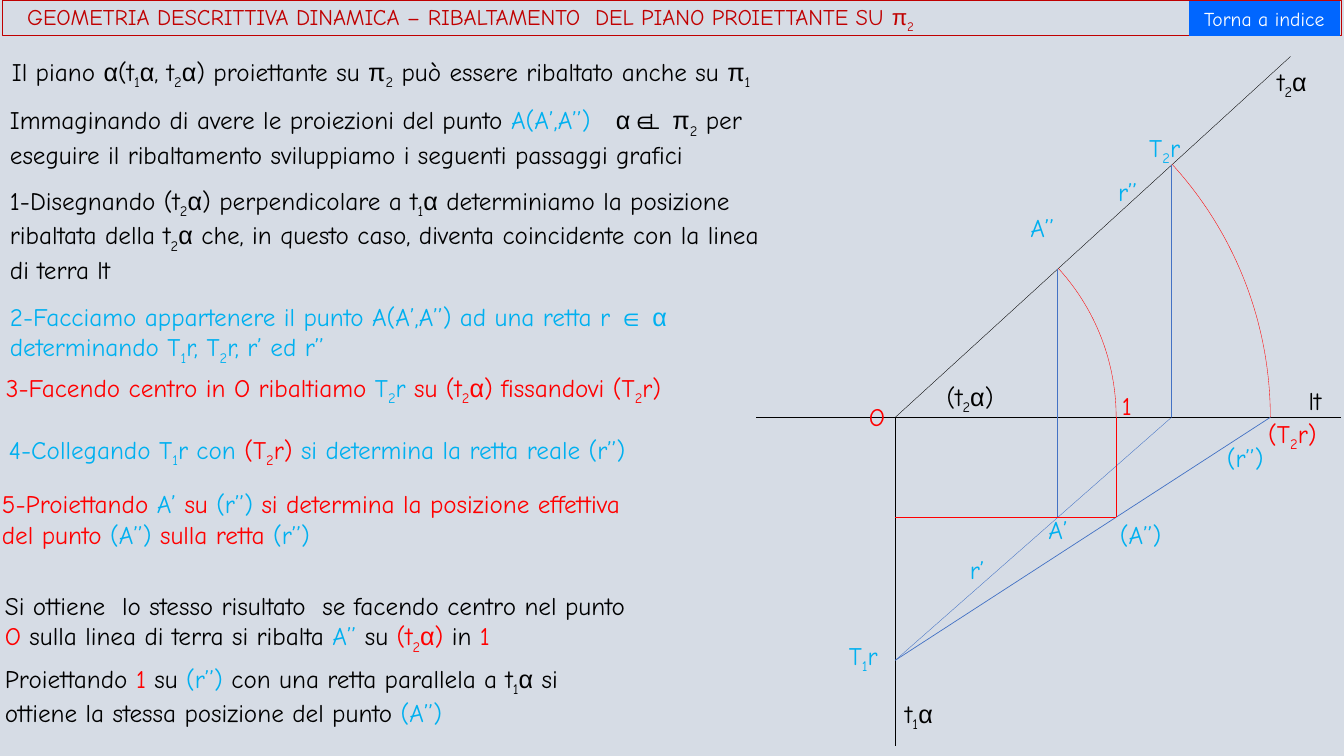
from itertools import groupby

from lxml import etree
from pptx import Presentation
from pptx.dml.color import RGBColor
from pptx.enum.shapes import MSO_CONNECTOR, MSO_SHAPE
from pptx.enum.text import MSO_ANCHOR, MSO_AUTO_SIZE, PP_ALIGN
from pptx.oxml.ns import qn
from pptx.util import Inches, Pt

STRAIGHT = MSO_CONNECTOR.STRAIGHT
ARC, BUTTON = MSO_SHAPE.ARC, MSO_SHAPE.ACTION_BUTTON_CUSTOM
MIDDLE = MSO_ANCHOR.MIDDLE
LEFT, CENTER = PP_ALIGN.LEFT, PP_ALIGN.CENTER
NO_FIT, GROW = MSO_AUTO_SIZE.NONE, MSO_AUTO_SIZE.SHAPE_TO_FIT_TEXT

BACKGROUND = RGBColor(0xD6, 0xDC, 0xE5)
BLACK = RGBColor(0, 0, 0)
RED = RGBColor(0xFF, 0, 0)
DARK_RED = RGBColor(0xC0, 0, 0)
CYAN = RGBColor(0, 0xB0, 0xF0)
BLUE = RGBColor(0x44, 0x72, 0xC4)
BUTTON_BLUE = RGBColor(0, 0x66, 0xFF)
WHITE = RGBColor(0xFF, 0xFF, 0xFF)
COLORS = {"k": BLACK, "r": RED, "c": CYAN, "d": DARK_RED, "w": WHITE}
SUBSCRIPTS = {"₁": "1", "₂": "2"}


def char_style(char):
    if char in SUBSCRIPTS:
        return "Comic Neue", "-25000"
    return ("Arial" if char in "απ⊥∈" else "Comic Neue"), "0"


def write(tf, markup, size=18, align=LEFT):
    p = tf.paragraphs[0]
    p.alignment = align
    for part in markup.split("|"):
        for (font, baseline), chars in groupby(part[1:], char_style):
            r = p.add_run()
            r.text = "".join(SUBSCRIPTS.get(c, c) for c in chars)
            for name, value in {"name": font, "size": Pt(size)}.items():
                setattr(r.font, name, value)
            r.font.color.rgb = COLORS[part[0]]
            if baseline != "0":
                r.font._element.set("baseline", baseline)
    return p


prs = Presentation()
prs.slide_width, prs.slide_height = Inches(13.33), Inches(7.5)
s = prs.slides.add_slide(prs.slide_layouts[5])
s.background.fill.solid()
s.background.fill.fore_color.rgb = BACKGROUND

title = s.shapes.title
box = {"left": 0.02, "top": 0, "width": 13.28, "height": 0.35}
for name, value in box.items():
    setattr(title, name, Inches(value))
title.line.color.rgb = DARK_RED
title.line.width = Pt(0.25)
tf = title.text_frame
frame = {"auto_size": NO_FIT, "word_wrap": True, "vertical_anchor": MIDDLE,
         "margin_left": Inches(0.25)}
for name, value in frame.items():
    setattr(tf, name, value)
p = write(tf, "dGEOMETRIA DESCRITTIVA DINAMICA – RIBALTAMENTO  DEL PIANO "
              "PROIETTANTE SU π₂", 16)
p.line_spacing = 0.9

ground_y, a1_y = 4.14, 5.13
O = (8.88, ground_y)
T1 = (8.88, 6.55)
T2 = (11.62, 1.64)
T2_ground = (11.62, ground_y)
T2_turned = (12.6, ground_y)
A1, A2 = (10.49, a1_y), (10.49, 2.67)
A2_ground, A2_turned = (11.07, ground_y), (11.07, a1_y)

lines = [
    ((7.5, ground_y), (13.3, ground_y), BLACK, 0.25),
    (O, (8.88, 7.4), BLACK, 0.25),
    ((12.8, 0.56), O, BLACK, 0.25),
    (T2, T2_ground, BLUE, 0.25),
    (T2_ground, T1, BLUE, 0.25),
    (A2, A1, BLUE, 0.25),
    (T1, T2_turned, BLUE, 0.5),
    (A2_ground, A2_turned, RED, 0.25),
    ((8.88, a1_y), A2_turned, RED, 0.5),
]
for start, end, color, width in lines:
    sp = s.shapes.add_connector(STRAIGHT, *map(Inches, start + end))
    sp.line.color.rgb = color
    sp.line.width = Pt(width)
    etree.SubElement(sp._element.spPr, qn("a:effectLst"))

for turned in (T2_turned, A2_ground):
    radius = turned[0] - O[0]
    sp = s.shapes.add_shape(ARC, Inches(O[0] - radius), Inches(O[1] - radius),
                            Inches(2 * radius), Inches(2 * radius))
    sp.adjustments[0], sp.adjustments[1] = 190.56, 0
    sp.shadow.inherit = False
    sp.fill.background()
    sp.line.color.rgb = RED
    sp.line.width = Pt(0.25)

texts = [
    (8.88, 6.88, 0.58, "kt₁α"),
    (12.57, 0.61, 0.58, "kt₂α"),
    (12.88, 3.77, 0.58, "klt"),
    (9.29, 3.73, 0.79, "k(t₂α)"),
    (8.32, 6.3, 0.64, "cT₁r"),
    (11.3, 1.26, 0.64, "cT₂r"),
    (12.07, 4.34, 0.7, "c(r’’)"),
    (10.99, 1.7, 0.58, "cr’’"),
    (9.52, 5.45, 0.58, "cr’"),
    (10.12, 2.06, 0.58, "cA’’"),
    (10.3, 5.05, 0.58, "cA’"),
    (11.01, 5.1, 0.67, "c(A’’)"),
    (12.48, 4.1, 0.79, "r(T₂r)"),
    (8.52, 3.93, 0.58, "rO"),
    (11.03, 3.82, 0.37, "r1"),
    (0.02, 0.51, 8.5, "kIl piano α(t₁α, t₂α) proiettante su π₂ può essere "
                      "ribaltato anche su π₁"),
    (0, 0.99, 7.88, "kImmaginando di avere le proiezioni del punto |cA(A’,A’’)   "
                    "|kα ⊥ π₂ per eseguire il ribaltamento sviluppiamo i "
                    "seguenti passaggi grafici"),
    (6.17, 0.99, 0.4, "k∈"),
    (0, 1.79, 7.88, "k1-Disegnando (t₂α) perpendicolare a t₁α determiniamo la "
                    "posizione ribaltata della t₂α che, in questo caso, diventa "
                    "coincidente con la linea di terra lt"),
    (0, 2.94, 7.27, "c2-Facciamo appartenere il punto A(A’,A’’) ad una retta "
                    "r ∈ α determinando T₁r, T₂r, r’ ed r’’"),
    (-0.04, 3.64, 7.46, "r3-Facendo centro in O ribaltiamo |cT₂r|r su (t₂α) "
                        "fissandovi (T₂r)"),
    (-0.01, 4.26, 7.13, "c4-Collegando T₁r con |r(T₂r) |csi determina la retta "
                        "reale (r’’)"),
    (-0.08, 4.8, 6.58, "r5-Proiettando |cA’|r su |c(r’’) |rsi determina la "
                       "posizione effettiva del punto |c(A’’)|r sulla retta "
                       "|c(r’’)"),
    (-0.05, 5.81, 6.48, "kSi ottiene  lo stesso risultato  se facendo centro nel "
                        "punto |rO|k sulla linea di terra si ribalta |cA’’ |ksu "
                        "|r(t₂α) |kin |r1"),
    (-0.05, 6.53, 6.28, "kProiettando |r1|k su |c(r’’) |kcon una retta parallela a "
                        "t₁α si ottiene la stessa posizione del punto |c(A’’)"),
]
for left, top, width, markup in texts:
    sp = s.shapes.add_textbox(Inches(left), Inches(top), Inches(width), Inches(0.4))
    sp.text_frame.word_wrap = True
    sp.text_frame.auto_size = GROW
    write(sp.text_frame, markup)

sp = s.shapes.add_shape(BUTTON, Inches(11.79), Inches(0.01), Inches(1.5), Inches(0.35))
sp.shadow.inherit = False
sp.fill.solid()
sp.fill.fore_color.rgb = BUTTON_BLUE
sp.line.fill.background()
sp.text_frame.vertical_anchor = MIDDLE
write(sp.text_frame, "wTorna a indice", 14, CENTER)

prs.save("out.pptx")
